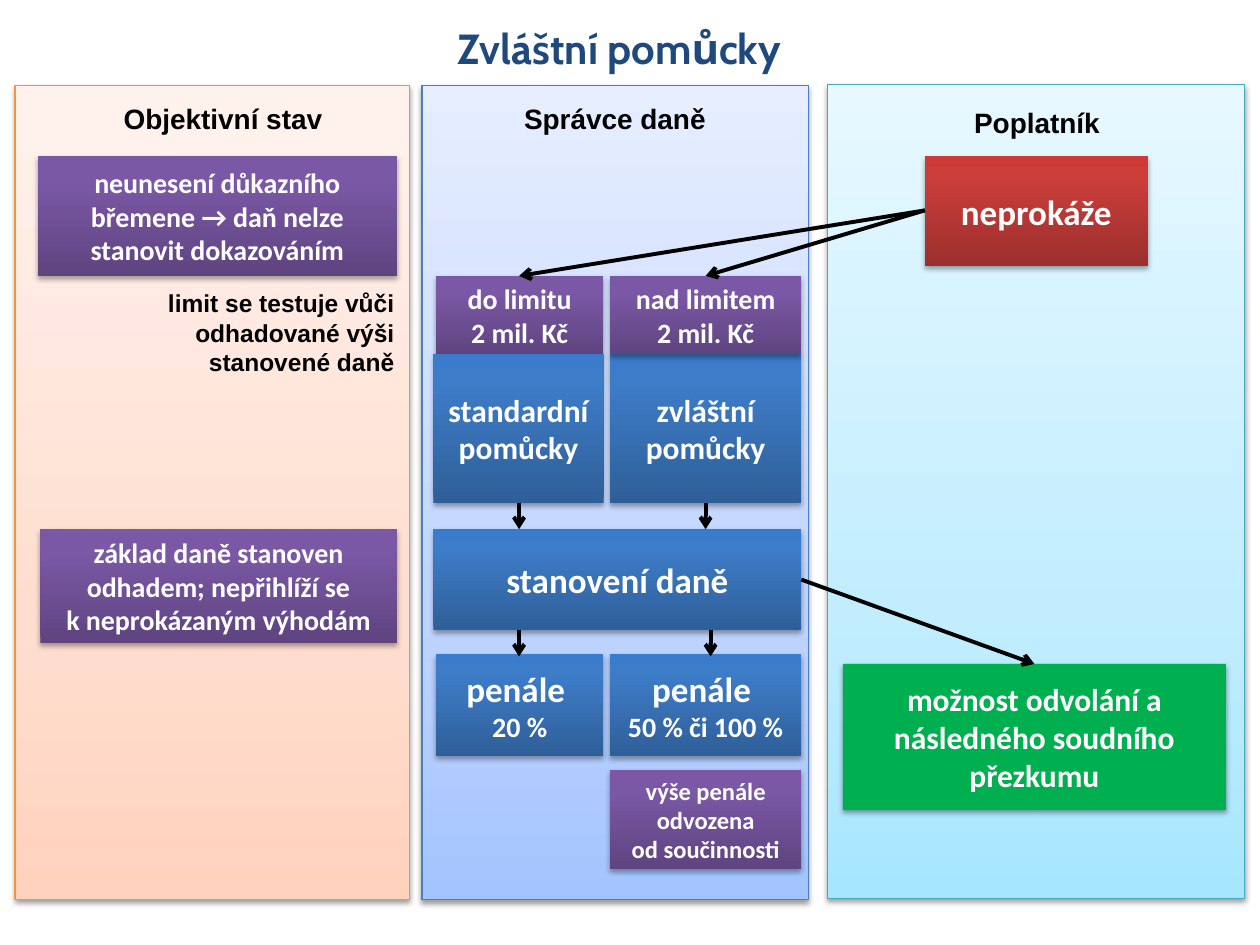
from copy import deepcopy
from lxml import etree
from pptx import Presentation
from pptx.dml.color import RGBColor
from pptx.enum import shapes, text
from pptx.oxml import ns
from pptx.util import Inches, Pt

COLORS = {"black": "000000", "white": "FFFFFF", "title": "1F497D", "green": "00B050",
          "cyan line": "46AAC5", "blue line": "4B7EBC", "orange line": "F69240"}
GRADIENTS = {
    "cyan": [(0, "A7E6FF"), (0.35, "C1EDFF"), (1, "E7F8FF")],
    "pale blue": [(0, "A4C4FF"), (0.35, "BFD4FF"), (1, "E6EEFF")],
    "orange": [(0, "FFD2BD"), (0.35, "FFDED0"), (1, "FFF2ED")],
    "red": [(0, "9C2F2D"), (0.8, "CB3E3A"), (1, "CE3B37")],
    "blue": [(0, "2F5F99"), (0.8, "3D7CC7"), (1, "3A7CCB")],
    "purple": [(0, "5F4480"), (0.8, "7B58A6"), (1, "7C57A8")],
}

deck = Presentation()
deck.slide_width, deck.slide_height = Inches(10), Inches(7.5)
page = deck.slides.add_slide(deck.slide_layouts[6])


def add_box(place, fill, line=None, opacity=35, distance=1.8):
    box = page.shapes.add_shape(shapes.MSO_SHAPE.RECTANGLE, *map(Inches, place))
    if fill in GRADIENTS:
        box.fill.gradient()
        box.fill.gradient_angle = 90
        stops = box._element.spPr.find(".//" + ns.qn("a:gsLst"))
        stops.append(deepcopy(stops[0]))
        for stop, (position, color) in zip(box.fill.gradient_stops, GRADIENTS[fill]):
            stop.position = position
            stop.color.rgb = RGBColor.from_string(color)
    else:
        box.fill.solid()
        box.fill.fore_color.rgb = RGBColor.from_string(COLORS[fill])
    if line:
        box.line.color.rgb = RGBColor.from_string(COLORS[line])
        box.line.width = Pt(0.75)
    else:
        box.line.fill.background()
    box.shadow.inherit = False
    effects = box._element.spPr.find(ns.qn("a:effectLst"))
    shadow = etree.SubElement(effects, ns.qn("a:outerShdw"), blurRad=str(Pt(3.1)),
                              dist=str(Pt(distance)), dir="5400000", rotWithShape="0")
    tint = etree.SubElement(shadow, ns.qn("a:srgbClr"), val=COLORS["black"])
    etree.SubElement(tint, ns.qn("a:alpha"), val=str(opacity * 1000))
    return box


def write(box, words, sizes, font, color, align=text.PP_ALIGN.CENTER):
    frame = box.text_frame
    frame.word_wrap = True
    frame.text = words
    for para in frame.paragraphs:
        para.alignment = align
        for index, span in enumerate(para.runs):
            span.font.size = Pt(sizes[min(index, len(sizes) - 1)])
            span.font.name = font
            span.font.bold = True
            span.font.color.rgb = RGBColor.from_string(COLORS[color])


columns = [
    ((6.57, 0.67, 3.31, 6.46), "cyan", "cyan line"),
    ((3.35, 0.68, 3.07, 6.46), "pale blue", "blue line"),
    ((0.12, 0.68, 3.13, 6.46), "orange", "orange line"),
]
for place, fill, line in columns:
    add_box(place, fill, line, 38, 1.6)

LEFT, LEFT_WIDTH = 3.46, 1.33
RIGHT, RIGHT_WIDTH = 4.84, 1.52
steps = [
    ((7.34, 1.24, 1.77, 0.87), "red", "neprokáže", [20]),
    ((RIGHT, 2.81, RIGHT_WIDTH, 1.18), "blue", "zvláštní pomůcky", [18]),
    ((0.3, 1.24, 2.85, 0.95), "purple",
     "neunesení důkazního břemene → daň nelze stanovit dokazováním", [16]),
    ((0.32, 4.2, 2.83, 0.9), "purple",
     "základ daně stanoven odhadem; nepřihlíží se\nk neprokázaným výhodám", [16]),
    ((3.44, 4.2, 2.92, 0.8), "blue", "stanovení daně", [20]),
    ((RIGHT, 6.11, RIGHT_WIDTH, 0.79), "purple", "výše penále odvozena\nod součinnosti", [14]),
    ((6.69, 5.27, 3.04, 1.16), "green", "možnost odvolání a následného soudního přezkumu", [18]),
    ((RIGHT, 2.19, RIGHT_WIDTH, 0.62), "purple", "nad limitem\n2 mil. Kč", [16]),
    ((LEFT, 2.19, LEFT_WIDTH, 0.62), "purple", "do limitu\n2 mil. Kč", [16]),
    ((3.44, 2.81, 1.35, 1.18), "blue", "standardní pomůcky", [18]),
    ((RIGHT, 5.19, RIGHT_WIDTH, 0.81), "blue", "penále \v50 % či 100 %", [20, 16]),
    ((LEFT, 5.19, LEFT_WIDTH, 0.81), "blue", "penále \v20 %", [20, 16]),
]
for place, fill, words, sizes in steps:
    box = add_box(place, fill)
    box.text_frame.vertical_anchor = text.MSO_ANCHOR.MIDDLE
    write(box, words, sizes, "Calibri", "white")

arrows = [
    (4.12, 3.99, 4.12, 4.2), (5.6, 3.99, 5.6, 4.2),
    (4.12, 5, 4.12, 5.21), (5.64, 5, 5.64, 5.21),
    (6.36, 4.6, 8.21, 5.27),
    (7.34, 1.67, 5.6, 2.19), (7.34, 1.67, 4.12, 2.19),
]
for ends in arrows:
    arrow = page.shapes.add_connector(shapes.MSO_CONNECTOR.STRAIGHT, *map(Inches, ends))
    arrow.line.color.rgb = RGBColor.from_string(COLORS["black"])
    arrow.line.width = Pt(2.25)
    etree.SubElement(arrow.line._get_or_add_ln(), ns.qn("a:tailEnd"), type="arrow")
    etree.SubElement(arrow._element.spPr, ns.qn("a:effectLst"))

CENTER, END = text.PP_ALIGN.CENTER, text.PP_ALIGN.RIGHT
labels = [
    ((0.51, 0.76, 2.52, 0.37), "Objektivní stav", 16, "Arial", "black", CENTER),
    ((3.62, 0.76, 2.52, 0.37), "Správce daně", 16, "Arial", "black", CENTER),
    ((6.97, 0.79, 2.52, 0.37), "Poplatník", 16, "Arial", "black", CENTER),
    ((1.46, 0.13, 6.91, 0.5), "Zvláštní pomůcky", 24, "Cabin", "title", CENTER),
    ((0.51, 2.24, 2.72, 0.81), "limit se testuje vůči odhadované výši stanovené daně",
     14, "Arial", "black", END),
]
for place, words, size, font, color, align in labels:
    label = page.shapes.add_textbox(*map(Inches, place))
    write(label, words, [size], font, color, align)

deck.save("out.pptx")
